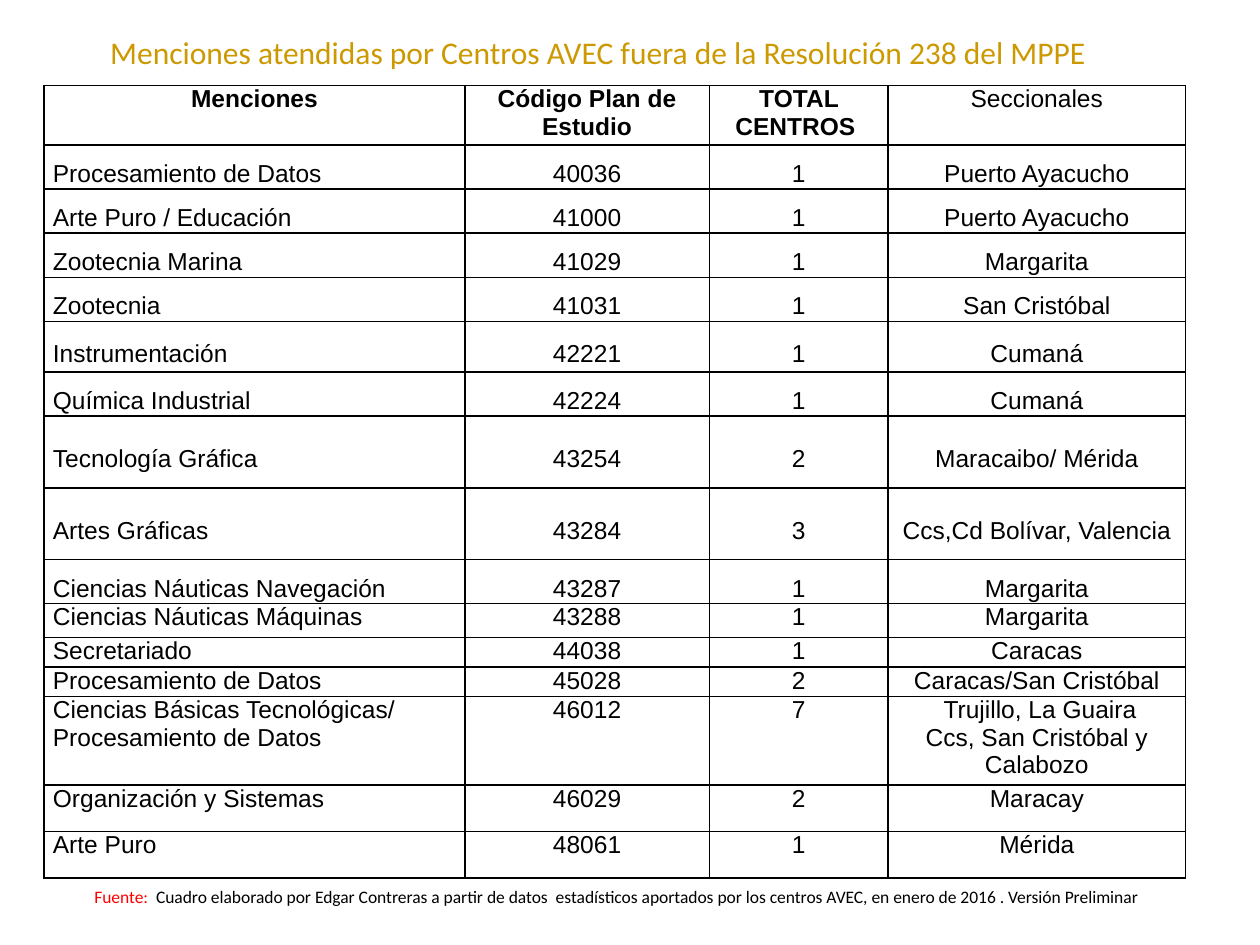
from lxml.etree import SubElement
from pptx import Presentation
from pptx.dml.color import RGBColor
from pptx.enum.text import MSO_ANCHOR, MSO_AUTO_SIZE, PP_ALIGN
from pptx.oxml.ns import qn
from pptx.util import Inches, Pt

COLORS = {"text": "000000", "title": "CC9900", "label": "FF0000", "border": "000000"}

COL_WIDTHS = [3.34, 1.94, 1.42, 2.36]
HEADERS = ["Menciones", "Código Plan de Estudio", "TOTAL CENTROS ", "Seccionales"]
SPACED_ROWS = range(1, 10)
ROWS = [
    (0.35, "Procesamiento de Datos", "40036", "1", "Puerto Ayacucho"),
    (0.35, "Arte Puro / Educación", "41000", "1", "Puerto Ayacucho"),
    (0.35, "Zootecnia Marina", "41029", "1", "Margarita"),
    (0.35, "Zootecnia", "41031", "1", "San Cristóbal"),
    (0.4, "Instrumentación", "42221", "1", "Cumaná"),
    (0.35, "Química Industrial", "42224", "1", "Cumaná"),
    (0.57, "Tecnología Gráfica", "43254", "2", "Maracaibo/ Mérida"),
    (0.57, "Artes Gráficas", "43284", "3", "Ccs,Cd Bolívar, Valencia"),
    (0.35, "Ciencias Náuticas Navegación", "43287", "1", "Margarita"),
    (0.27, "Ciencias Náuticas Máquinas", "43288", "1", "Margarita"),
    (0.23, "Secretariado", "44038", "1", "Caracas"),
    (0.23, "Procesamiento de Datos", "45028", "2", "Caracas/San Cristóbal"),
    (0.7, "Ciencias Básicas Tecnológicas/ Procesamiento de Datos", "46012", "7",
     " Trujillo, La Guaira\nCcs, San Cristóbal y Calabozo"),
    (0.37, "Organización y Sistemas", "46029", "2", "Maracay"),
    (0.37, "Arte Puro", "48061", "1", "Mérida"),
]


def add_text(p, text, font="Calibri", size=10, color="text", bold=False,
             align=PP_ALIGN.LEFT, spacing=None):
    p.alignment = align
    if spacing:
        p.line_spacing = spacing
    r = p.add_run()
    r.text = text
    r.font.name = font
    r.font.size = Pt(size)
    r.font.bold = bold
    r.font.color.rgb = RGBColor.from_string(COLORS[color])


def place(sp, left, top, width, height):
    sp.left, sp.top = Inches(left), Inches(top)
    sp.width, sp.height = Inches(width), Inches(height)


def add_title(s):
    sp = s.shapes.title
    place(sp, 0.59, 0.21, 8.43, 0.4)
    tf = sp.text_frame
    tf.word_wrap = True
    tf.auto_size = MSO_AUTO_SIZE.SHAPE_TO_FIT_TEXT
    tf.vertical_anchor = MSO_ANCHOR.TOP
    add_text(tf.paragraphs[0],
             "Menciones atendidas por Centros AVEC fuera de la Resolución 238 del MPPE  ",
             size=18, color="title", align=PP_ALIGN.CENTER)


def set_borders(cell):
    tc_pr = cell._tc.get_or_add_tcPr()
    for side in ("a:lnL", "a:lnR", "a:lnT", "a:lnB"):
        ln = SubElement(tc_pr, qn(side), w=str(Pt(1)))
        fill = SubElement(ln, qn("a:solidFill"))
        SubElement(fill, qn("a:srgbClr"), val=COLORS["border"])


def fill_cell(cell, text, spaced=False, **fmt):
    cell.margin_left = cell.margin_right = Inches(0.07)
    cell.margin_top = cell.margin_bottom = 0
    cell.vertical_anchor = MSO_ANCHOR.MIDDLE if spaced else MSO_ANCHOR.TOP
    set_borders(cell)
    cell.fill.background()
    tf = cell.text_frame
    for i, line in enumerate(text.split("\n")):
        p = tf.add_paragraph() if i else tf.paragraphs[0]
        add_text(p, line, font="Arial", size=14, spacing=1.5 if spaced else None, **fmt)


def add_mentions_table(s):
    rows = [(0.47, *HEADERS), *ROWS]
    frame = s.shapes.add_table(len(rows), len(COL_WIDTHS), Inches(0.35), Inches(0.68),
                               Inches(sum(COL_WIDTHS)), Inches(sum(r[0] for r in rows)))
    table = frame.table
    table.first_row = table.horz_banding = False
    for col, width in zip(table.columns, COL_WIDTHS):
        col.width = Inches(width)
    for i, (height, *texts) in enumerate(rows):
        table.rows[i].height = Inches(height)
        for j, text in enumerate(texts):
            left = i > 0 and j == 0
            fill_cell(table.cell(i, j), text, spaced=i in SPACED_ROWS,
                      bold=i == 0 and j < 3,
                      align=PP_ALIGN.LEFT if left else PP_ALIGN.CENTER)


def add_source(s):
    sp = s.shapes.add_textbox(Inches(0.65), Inches(6.98), Inches(8.68), Inches(0.27))
    tf = sp.text_frame
    tf.word_wrap = False
    tf.auto_size = MSO_AUTO_SIZE.SHAPE_TO_FIT_TEXT
    p = tf.paragraphs[0]
    add_text(p, "Fuente:  ", color="label")
    add_text(p, "Cuadro elaborado por Edgar Contreras a partir de datos  estadísticos "
                "aportados por los centros AVEC, en enero de 2016 . Versión Preliminar")


def main():
    prs = Presentation()
    prs.slide_width, prs.slide_height = Inches(10), Inches(7.5)
    s = prs.slides.add_slide(prs.slide_layouts[5])
    add_title(s)
    add_mentions_table(s)
    add_source(s)
    prs.save("out.pptx")


if __name__ == "__main__":
    main()
